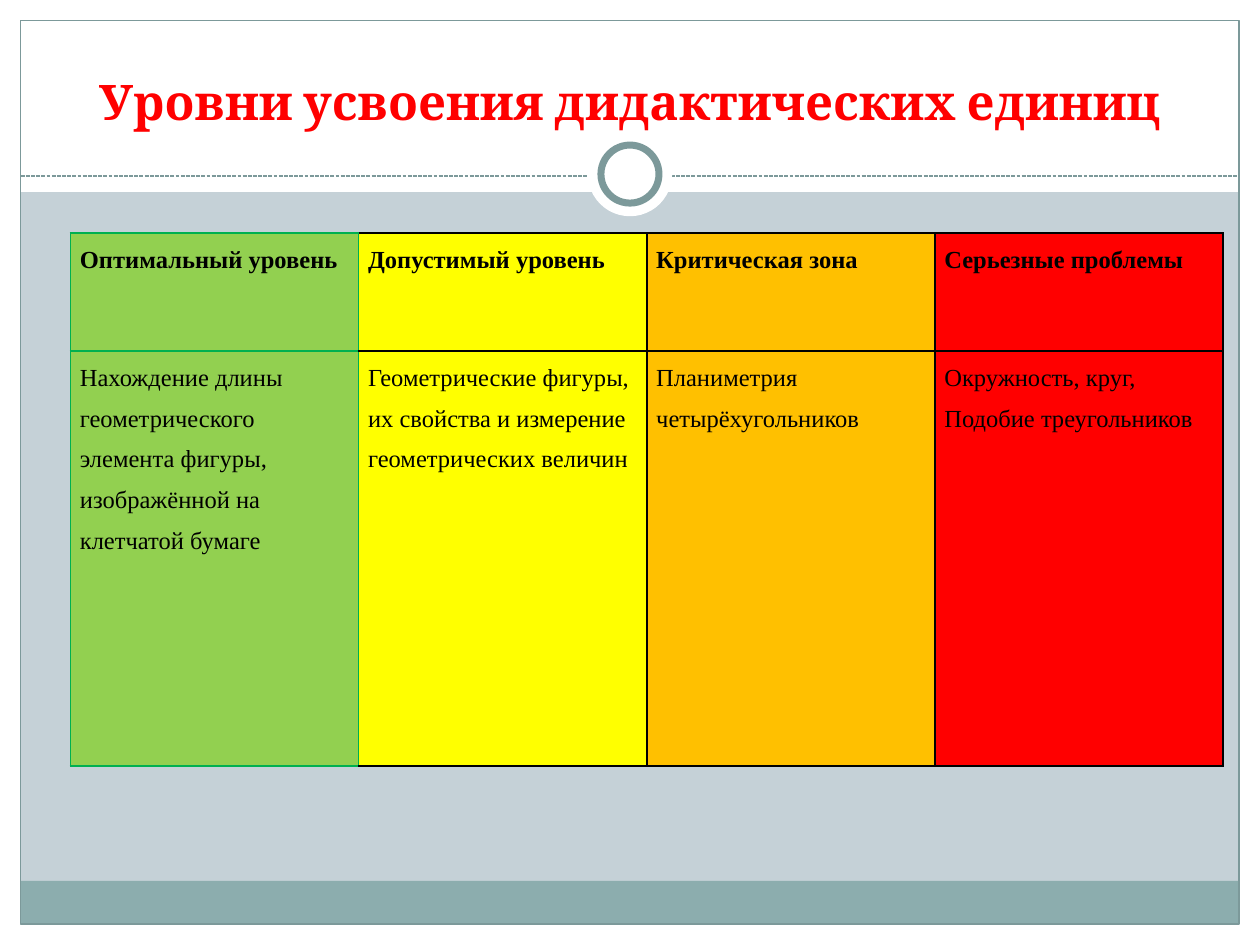
from lxml.etree import SubElement
from pptx import Presentation
from pptx.dml.color import RGBColor
from pptx.enum.dml import MSO_LINE
from pptx.enum.shapes import MSO_CONNECTOR, MSO_SHAPE
from pptx.enum.text import MSO_ANCHOR, PP_ALIGN
from pptx.oxml.ns import qn
from pptx.util import Cm, Pt

COLORS = {
    "background": "C5D1D7",
    "white": "FFFFFF",
    "band": "8CADAE",
    "frame": "7C999A",
    "title": "FF0000",
    "text": "000000",
    "green_border": "00B050",
    "optimal": "92D050",
    "acceptable": "FFFF00",
    "critical": "FFC000",
    "serious": "FF0000",
}
PAGE_WIDTH, PAGE_HEIGHT, MARGIN = 25.4, 19.05, 0.42
INNER_WIDTH = PAGE_WIDTH - 2 * MARGIN
DIVIDER_TOP = 3.55
ROW_HEIGHTS = (2.38, 8.36)
COLUMN_WIDTH = 5.81

LEVELS = [
    ("optimal", "Оптимальный уровень",
     ["Нахождение длины геометрического элемента фигуры, изображённой на клетчатой бумаге"]),
    ("acceptable", "Допустимый уровень",
     ["Геометрические фигуры, их свойства и измерение геометрических величин"]),
    ("critical", "Критическая зона", ["Планиметрия четырёхугольников"]),
    ("serious", "Серьезные проблемы", ["Окружность, круг,", "Подобие треугольников"]),
]

TITLE_FONT = {"name": "Cambria", "size": Pt(28), "bold": True}
HEADER_FONT = {"name": "Times New Roman", "size": Pt(14), "bold": True}
BODY_FONT = {**HEADER_FONT, "bold": False}
CELL_MARGINS = {
    "margin_left": Cm(0.19), "margin_right": Cm(0.19),
    "margin_top": 0, "margin_bottom": 0,
}


def color(name):
    return RGBColor.from_string(COLORS[name])


def set_values(target, values):
    for name, value in values.items():
        setattr(target, name, value)


def write_paragraphs(frame, texts, font, font_color, layout):
    for index, text in enumerate(texts):
        para = frame.add_paragraph() if index else frame.paragraphs[0]
        set_values(para, layout)
        span = para.add_run()
        span.text = text
        set_values(span.font, font)
        span.font.color.rgb = color(font_color)


def add_figure(page, kind, bounds, fill=None, line=None, line_width=0.75):
    shape = page.shapes.add_shape(kind, *map(Cm, bounds))
    shape.shadow.inherit = False
    if fill:
        shape.fill.solid()
        shape.fill.fore_color.rgb = color(fill)
    else:
        shape.fill.background()
    if line:
        shape.line.color.rgb = color(line)
        shape.line.width = Pt(line_width)
    else:
        shape.line.fill.background()


def add_divider(page):
    divider = page.shapes.add_connector(
        MSO_CONNECTOR.STRAIGHT,
        Cm(MARGIN), Cm(DIVIDER_TOP), Cm(MARGIN + INNER_WIDTH), Cm(DIVIDER_TOP))
    divider.line.color.rgb = color("frame")
    set_values(divider.line, {"width": Pt(0.75), "dash_style": MSO_LINE.SQUARE_DOT})
    SubElement(divider.element.spPr, qn("a:effectLst"))


def add_circle(page, diameter, **style):
    left = (PAGE_WIDTH - diameter) / 2
    top = 3.51 - diameter / 2
    add_figure(page, MSO_SHAPE.OVAL, (left, top, diameter, diameter), **style)


def add_decoration(page):
    right = PAGE_WIDTH - MARGIN
    bottom = PAGE_HEIGHT - MARGIN
    for bounds in (
        (0, bottom, PAGE_WIDTH, MARGIN),
        (0, 0, PAGE_WIDTH, 3.87),
        (0, 0, MARGIN, PAGE_HEIGHT),
        (right, 0, MARGIN, PAGE_HEIGHT),
    ):
        add_figure(page, MSO_SHAPE.RECTANGLE, bounds, fill="white")
    add_figure(page, MSO_SHAPE.RECTANGLE, (MARGIN, 17.76, INNER_WIDTH, 0.87), fill="band")
    add_figure(page, MSO_SHAPE.RECTANGLE,
               (MARGIN, MARGIN, INNER_WIDTH, PAGE_HEIGHT - 2 * MARGIN), line="frame")
    add_divider(page)
    add_circle(page, 1.7, fill="white")
    add_circle(page, 1.17, fill="white", line="frame", line_width=4)


def add_title(page, text):
    box = page.shapes.add_textbox(Cm(0.85), Cm(0.64), Cm(23.7), Cm(2.11))
    set_values(box.text_frame, {"word_wrap": True, "vertical_anchor": MSO_ANCHOR.BOTTOM})
    write_paragraphs(box.text_frame, [text], TITLE_FONT, "title",
                     {"alignment": PP_ALIGN.CENTER})


def set_borders(cell, sides):
    properties = cell._tc.get_or_add_tcPr()
    for side, name in sides.items():
        line = SubElement(properties, qn(f"a:ln{side}"), w=str(Pt(1)))
        fill = SubElement(line, qn("a:solidFill"))
        SubElement(fill, qn("a:srgbClr"), val=COLORS[name])


def fill_cell(cell, texts, font, fill, sides):
    set_borders(cell, sides)
    cell.fill.solid()
    cell.fill.fore_color.rgb = color(fill)
    set_values(cell, CELL_MARGINS)
    write_paragraphs(cell.text_frame, texts, font, "text", {"line_spacing": 1.5})


def add_levels_table(page):
    table = page.shapes.add_table(
        len(ROW_HEIGHTS), len(LEVELS), Cm(1.42), Cm(4.7),
        Cm(COLUMN_WIDTH * len(LEVELS)), Cm(sum(ROW_HEIGHTS))).table
    set_values(table, {"first_row": False, "horz_banding": False})
    for row, height in zip(table.rows, ROW_HEIGHTS):
        row.height = Cm(height)
    for index, (fill, heading, topics) in enumerate(LEVELS):
        table.columns[index].width = Cm(COLUMN_WIDTH)
        sides = dict.fromkeys("LRTB", "green_border" if index == 0 else "text")
        if index == 1:
            sides["L"] = "green_border"
        fill_cell(table.cell(0, index), [heading], HEADER_FONT, fill, sides)
        fill_cell(table.cell(1, index), topics, BODY_FONT, fill, sides)


def main():
    deck = Presentation()
    set_values(deck, {"slide_width": Cm(PAGE_WIDTH), "slide_height": Cm(PAGE_HEIGHT)})
    page = deck.slides.add_slide(deck.slide_layouts[6])
    page.background.fill.solid()
    page.background.fill.fore_color.rgb = color("background")
    add_decoration(page)
    add_title(page, "Уровни усвоения дидактических единиц")
    add_levels_table(page)
    deck.save("out.pptx")


if __name__ == "__main__":
    main()
